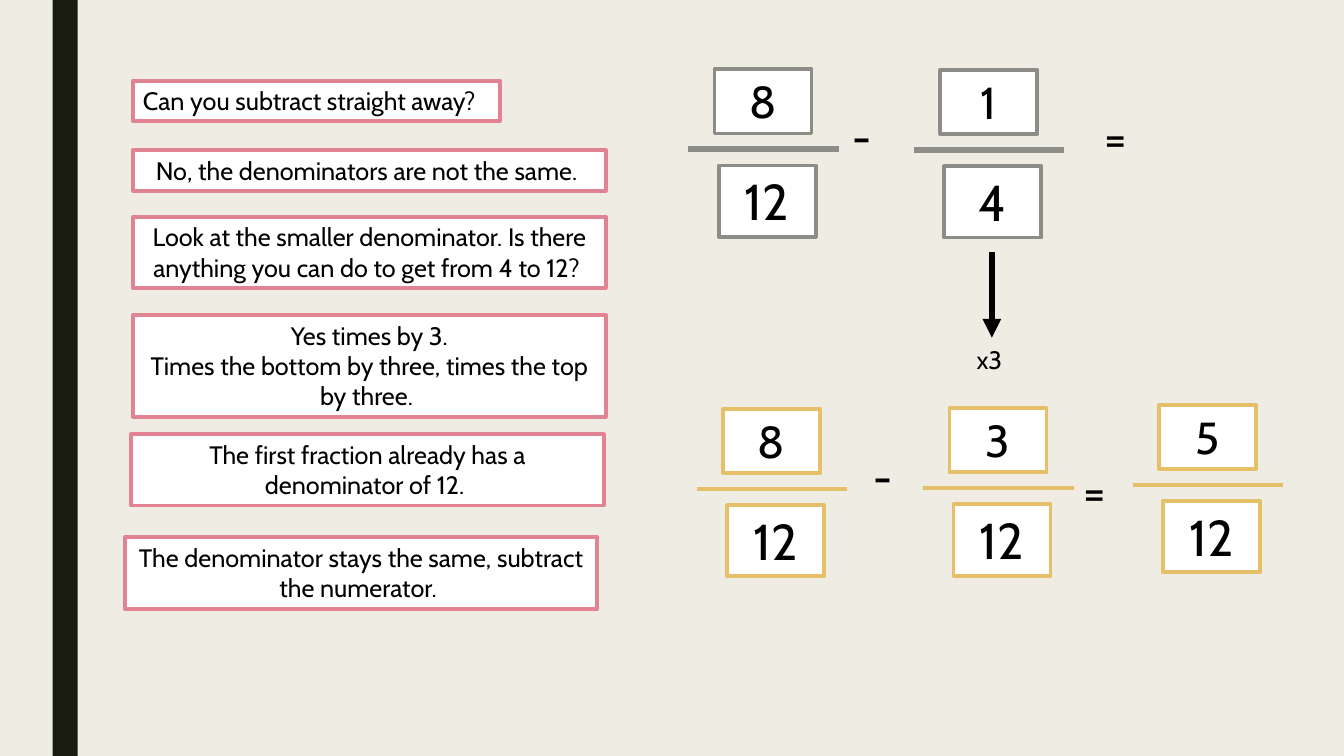
import pptx
import pptx.dml.color
import pptx.enum.shapes
import pptx.enum.text
import pptx.oxml.xmlchemy
import pptx.util

Pt = pptx.util.Pt
ALIGN = pptx.enum.text.PP_ALIGN
COLOURS = {
    "background": "EFEDE3",
    "stripe": "191B0E",
    "box": "FFFFFF",
    "text": "000000",
    "step": "E28394",
    "question": "8C8D86",
    "answer": "E6C069",
}


def colour(name):
    return pptx.dml.color.RGBColor.from_string(COLOURS[name])


def set_all(target, values):
    for name, value in values.items():
        setattr(target, name, value)


class FractionSlide:
    font = "Cabin"
    outline = 2.75

    def __init__(self, presentation):
        self.slide = presentation.slides.add_slide(presentation.slide_layouts[6])
        fill = self.slide.background.fill
        fill.solid()
        fill.fore_color.rgb = colour("background")

    def stripe(self, left, top, width, height):
        shape = self.slide.shapes.add_shape(
            pptx.enum.shapes.MSO_SHAPE.RECTANGLE, Pt(left), Pt(top), Pt(width), Pt(height))
        shape.shadow.inherit = False
        shape.fill.solid()
        shape.fill.fore_color.rgb = colour("stripe")
        shape.line.fill.background()

    def text(self, lines, left, top, width, height, size=18, align=ALIGN.LEFT,
             border=None, wrap=True, parent=None):
        shapes = (parent or self.slide).shapes
        shape = shapes.add_textbox(Pt(left), Pt(top), Pt(width), Pt(height))
        if border:
            shape.fill.solid()
            shape.fill.fore_color.rgb = colour("box")
            shape.line.color.rgb = colour(border)
            shape.line.width = Pt(self.outline)
        frame = shape.text_frame
        set_all(frame, {"text": lines, "word_wrap": wrap,
                        "auto_size": pptx.enum.text.MSO_AUTO_SIZE.SHAPE_TO_FIT_TEXT})
        for paragraph in frame.paragraphs:
            paragraph.alignment = align
            for run in paragraph.runs:
                set_all(run.font, {"name": self.font, "size": Pt(size)})
                run.font.color.rgb = colour("text")

    def line(self, start, end, name, width, arrow=False, parent=None):
        connector = (parent or self.slide).shapes.add_connector(
            pptx.enum.shapes.MSO_CONNECTOR.STRAIGHT, *map(Pt, start + end))
        connector.line.color.rgb = colour(name)
        connector.line.width = Pt(width)
        if arrow:
            head = pptx.oxml.xmlchemy.OxmlElement("a:tailEnd")
            head.set("type", "triangle")
            connector.line._get_or_add_ln().append(head)
        properties = connector._element.spPr
        properties.append(pptx.oxml.xmlchemy.OxmlElement("a:effectLst"))

    def fraction(self, numerator, denominator, left, top, name, bar_width):
        group = self.slide.shapes.add_group_shape()
        style = {"align": ALIGN.CENTER, "border": name, "parent": group}
        self.text(numerator, left, top, 69.3, 46, size=32, **style)
        self.text(denominator, left + 2.9, top + 68.8, 69.3, 51, size=36, **style)
        bar_left, bar_top = left - 18.7, top + 57.2
        self.line((bar_left, bar_top), (bar_left + 107.3, bar_top), name, bar_width,
                  parent=group)

    def operator(self, sign, left, top):
        self.text(sign, left, top, 29.5, 46, size=32)


def main():
    presentation = pptx.Presentation()
    set_all(presentation, {"slide_width": Pt(960), "slide_height": Pt(540)})
    page = FractionSlide(presentation)
    page.stripe(37.5, 0, 18, 540)

    # Questions and steps on the left
    page.text("Can you subtract straight away?", 95, 57.6, 262.1, 29,
              border="step", wrap=False)
    for step, left, top, height in (
        ("No, the denominators are not the same. ", 95, 107.2, 29),
        ("Look at the smaller denominator. Is there anything you can do to get "
         "from 4 to 12? ", 95, 154.8, 51),
        ("Yes times by 3.\nTimes the bottom by three, times the top by three. ",
         95, 224.9, 72.7),
        ("The first fraction already has a denominator of 12. ", 93.6, 310.1, 51),
        ("The denominator stays the same, subtract the numerator. ", 89, 383.8, 51),
    ):
        page.text(step, left, top, 337.7, height, align=ALIGN.CENTER, border="step")

    # Question row, then answer row
    for numerator, denominator, left, top, name, bar_width in (
        ("8", "12", 510.4, 49.4, "question", 4.5),
        ("1", "4", 671.7, 49.9, "question", 4.5),
        ("8", "12", 516.4, 291.9, "answer", 2.75),
        ("3", "12", 678.2, 291.4, "answer", 2.75),
        ("5", "12", 828, 289, "answer", 2.75),
    ):
        page.fraction(numerator, denominator, left, top, name, bar_width)
    for sign, left, top in (
        ("-", 602, 74.2), ("=", 782, 74.9), ("-", 617, 316.8), ("=", 766.8, 327.6),
    ):
        page.operator(sign, left, top)

    # Multiplier under the second fraction
    page.line((708.5, 180), (708.5, 241.2), "text", 4.5, arrow=True)
    page.text("x3", 690.5, 242.6, 33.1, 29, wrap=False)

    presentation.save("out.pptx")


if __name__ == "__main__":
    main()
